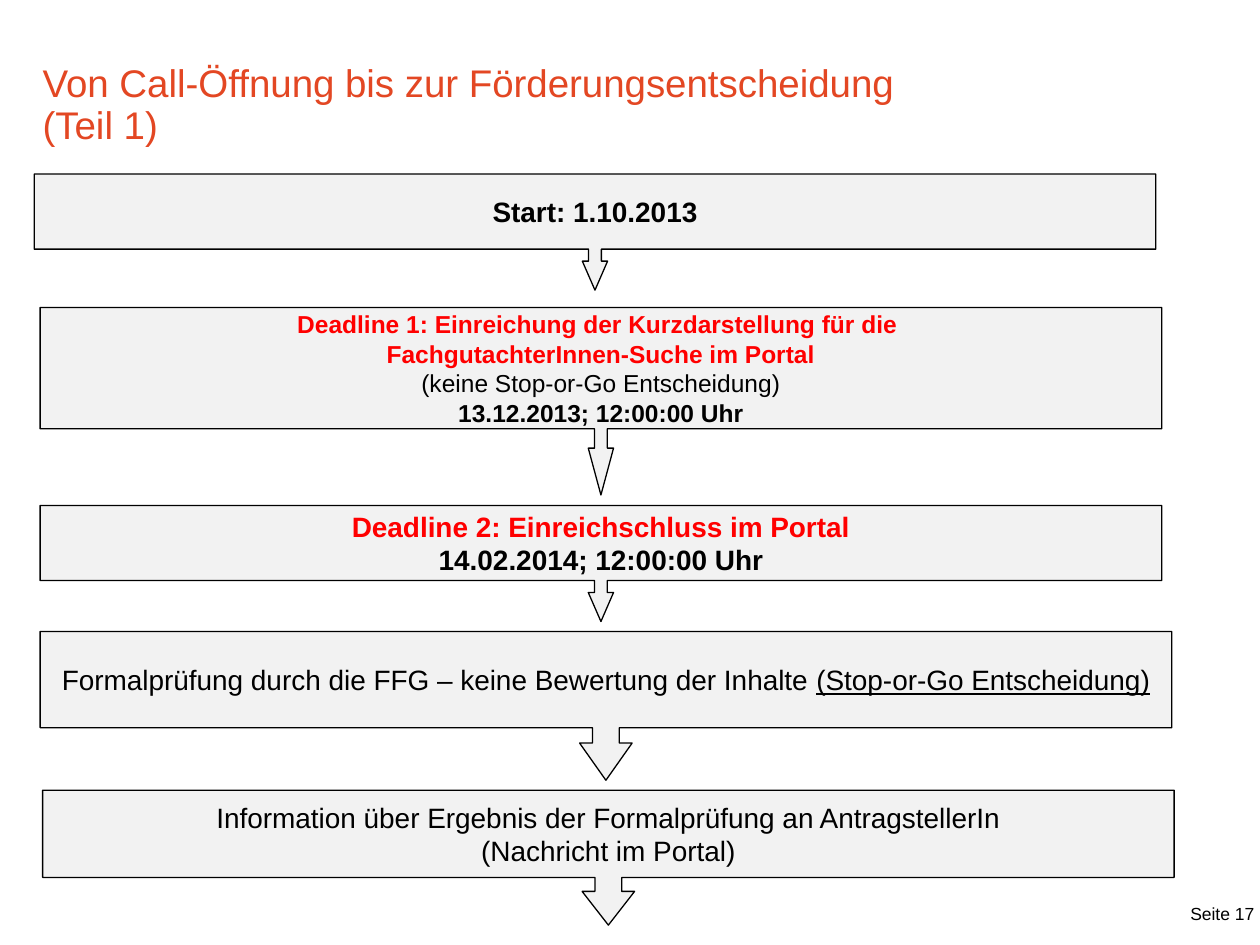
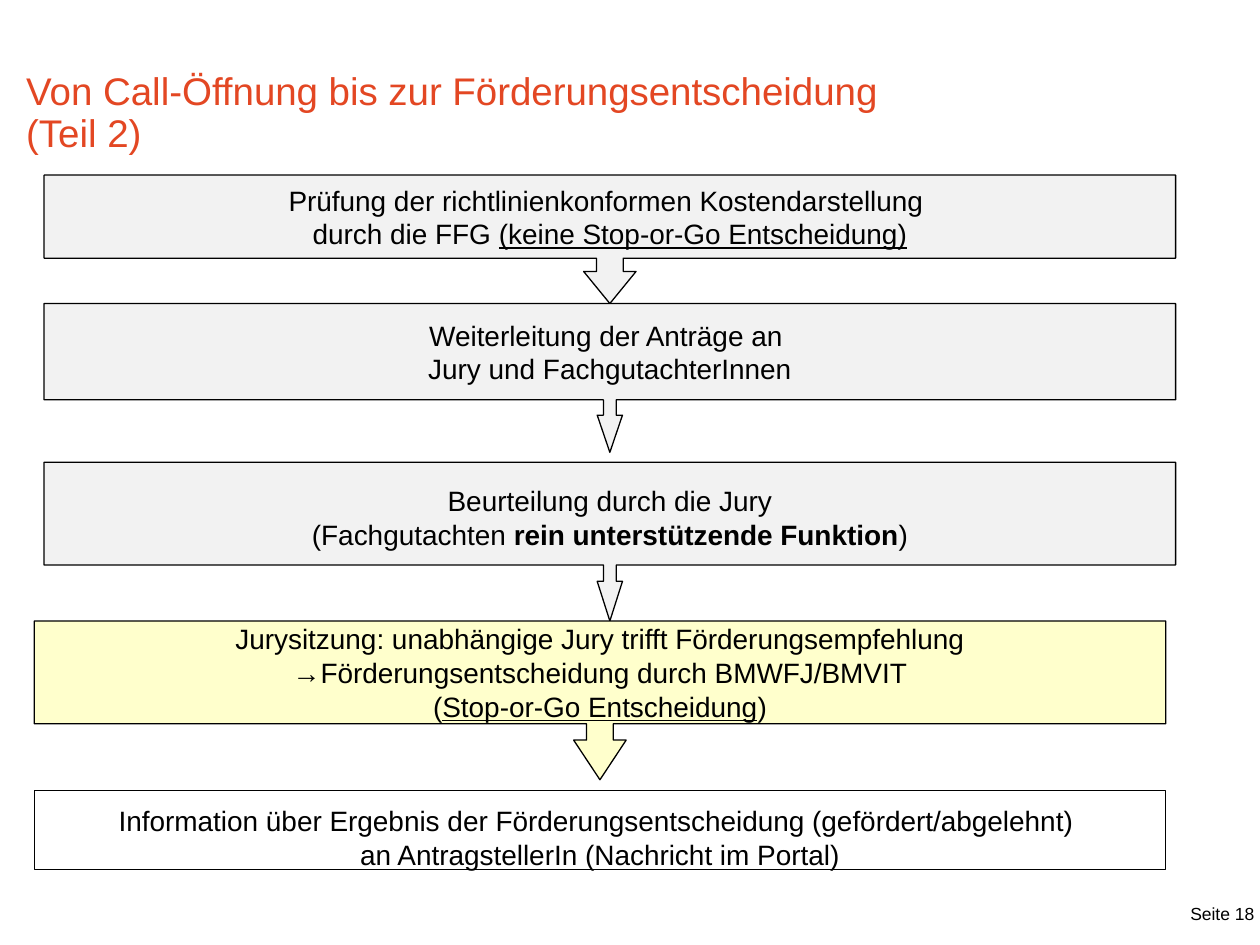
"""Build two flow chart slides that lead from the call opening to the funding decision."""
from pptx import Presentation
from pptx.dml.color import RGBColor
from pptx.enum import shapes, text
from pptx.util import Cm, Pt

BLACK = RGBColor(0x00, 0x00, 0x00)
RED = RGBColor(0xFF, 0x00, 0x00)
ORANGE = RGBColor(0xE3, 0x47, 0x23)
GREY = RGBColor(0xF2, 0xF2, 0xF2)
CREAM = RGBColor(0xFF, 0xFF, 0xCC)
FONT = "Arial"
THIN, WIDE = 0.26, 0.54
BODY = 0.647


def style(run, size, color, marks=""):
    font = run.font
    font.name = FONT
    font.size = Pt(size)
    font.color.rgb = RED if "r" in marks else color
    font.bold = "b" in marks
    font.underline = "u" in marks


def prepare(frame, anchor, wrap):
    frame.margin_left = frame.margin_right = 0
    frame.margin_top = frame.margin_bottom = 0
    frame.vertical_anchor = anchor
    frame.word_wrap = wrap


START = [
    (0.69, 3.51, 22.61, 2.34, THIN, GREY, 16, 0, [[("Start: 1.10.2013", "b")]]),
    (0.81, 6.2, 22.61, 3.78, THIN, GREY, 14, 0, [
        [("Deadline 1: Einreichung der Kurzdarstellung für die ", "br")],
        [("FachgutachterInnen-Suche im Portal", "br")],
        [("(keine Stop-or-Go Entscheidung)", "")],
        [("13.12.2013; 12:00:00 Uhr", "b")]]),
    (0.81, 10.19, 22.61, 2.34, THIN, GREY, 16, 0, [
        [("Deadline 2: Einreichschluss im Portal", "br")],
        [("14.02.2014; 12:00:00 Uhr", "b")]]),
    (0.81, 12.73, 22.81, 3, WIDE, GREY, 16, 0, [
        [("Formalprüfung durch die FFG – keine Bewertung der Inhalte ", ""),
         ("(Stop-or-Go Entscheidung)", "u")]]),
    (0.86, 15.93, 22.81, 2.72, WIDE, GREY, 16, 0, [
        [("Information über Ergebnis der Formalprüfung an AntragstellerIn", "")],
        [("(Nachricht im Portal)", "")]]),
]
FINISH = [
    (0.89, 3.53, 22.81, 2.59, WIDE, GREY, 16, 0, [
        [("Prüfung der richtlinienkonformen Kostendarstellung ", "")],
        [("durch die FFG ", ""), ("(keine Stop-or-Go Entscheidung)", "u")]]),
    (0.89, 6.12, 22.81, 3, THIN, GREY, 16, 0, [
        [("Weiterleitung der Anträge an ", "")],
        [("Jury und FachgutachterInnen", "")]]),
    (0.89, 9.32, 22.81, 3.2, THIN, GREY, 16, 0.15, [
        [("Beurteilung durch die Jury", "")],
        [("(Fachgutachten ", ""), ("rein unterstützende Funktion", "b"), (")", "")]]),
    (0.69, 12.52, 22.81, 3.2, WIDE, CREAM, 16, 0, [
        [("Jurysitzung: unabhängige Jury trifft Förderungsempfehlung", "")],
        [("→Förderungsentscheidung durch BMWFJ/BMVIT", "")],
        [("(", ""), ("Stop-or-Go Entscheidung", "u"), (")", "")]]),
    (0.69, 15.93, 22.81, 1.6, None, None, 16, 0.3, [
        [("Information über Ergebnis der Förderungsentscheidung (gefördert/abgelehnt) ", "")],
        [("an AntragstellerIn (Nachricht im Portal)", "")]]),
]
PAGES = [
    (17, "(Teil 1)", (0.86, 1.04, 21.69, 1.93), START),
    (18, "(Teil 2)", (0.53, 1.47, 22, 1.65), FINISH),
]

deck = Presentation()
deck.slide_width, deck.slide_height = Cm(25.4), Cm(19.05)

for number, part, place, steps in PAGES:
    slide = deck.slides.add_slide(deck.slide_layouts[6])

    title = slide.shapes.add_textbox(*map(Cm, place)).text_frame
    prepare(title, text.MSO_ANCHOR.BOTTOM, True)
    head = title.paragraphs[0]
    head.text = f"Von Call-Öffnung bis zur Förderungsentscheidung \v{part}"
    head.line_spacing = Pt(24)
    for run in head.runs:
        style(run, 22, ORANGE)

    for left, top, width, height, shaft, fill, size, pad, lines in steps:
        kind = shapes.MSO_SHAPE.DOWN_ARROW_CALLOUT if shaft else shapes.MSO_SHAPE.RECTANGLE
        box = slide.shapes.add_shape(kind, Cm(left), Cm(top), Cm(width), Cm(height))
        box.shadow.inherit = False
        box.line.color.rgb = BLACK
        box.line.width = Pt(0.75)
        if shaft:
            ratio = shaft / height
            for spot, value in enumerate((ratio, 0.98 * ratio, 0.25, BODY)):
                box.adjustments[spot] = value
        if fill:
            box.fill.solid()
            box.fill.fore_color.rgb = fill
        else:
            box.fill.background()
        frame = box.text_frame
        prepare(frame, text.MSO_ANCHOR.MIDDLE, False)
        frame.margin_top = Cm(pad)
        for row, parts in enumerate(lines):
            para = frame.add_paragraph() if row else frame.paragraphs[0]
            para.alignment = text.PP_ALIGN.CENTER
            for words, marks in parts:
                run = para.add_run()
                run.text = words
                style(run, size, BLACK, marks)

    foot = slide.shapes.add_textbox(Cm(23.88), Cm(17.91), Cm(1.52), Cm(1.02)).text_frame
    prepare(foot, text.MSO_ANCHOR.MIDDLE, True)
    foot.text = f"Seite {number}"
    foot.paragraphs[0].alignment = text.PP_ALIGN.CENTER
    style(foot.paragraphs[0].runs[0], 10, BLACK)

deck.save("out.pptx")
